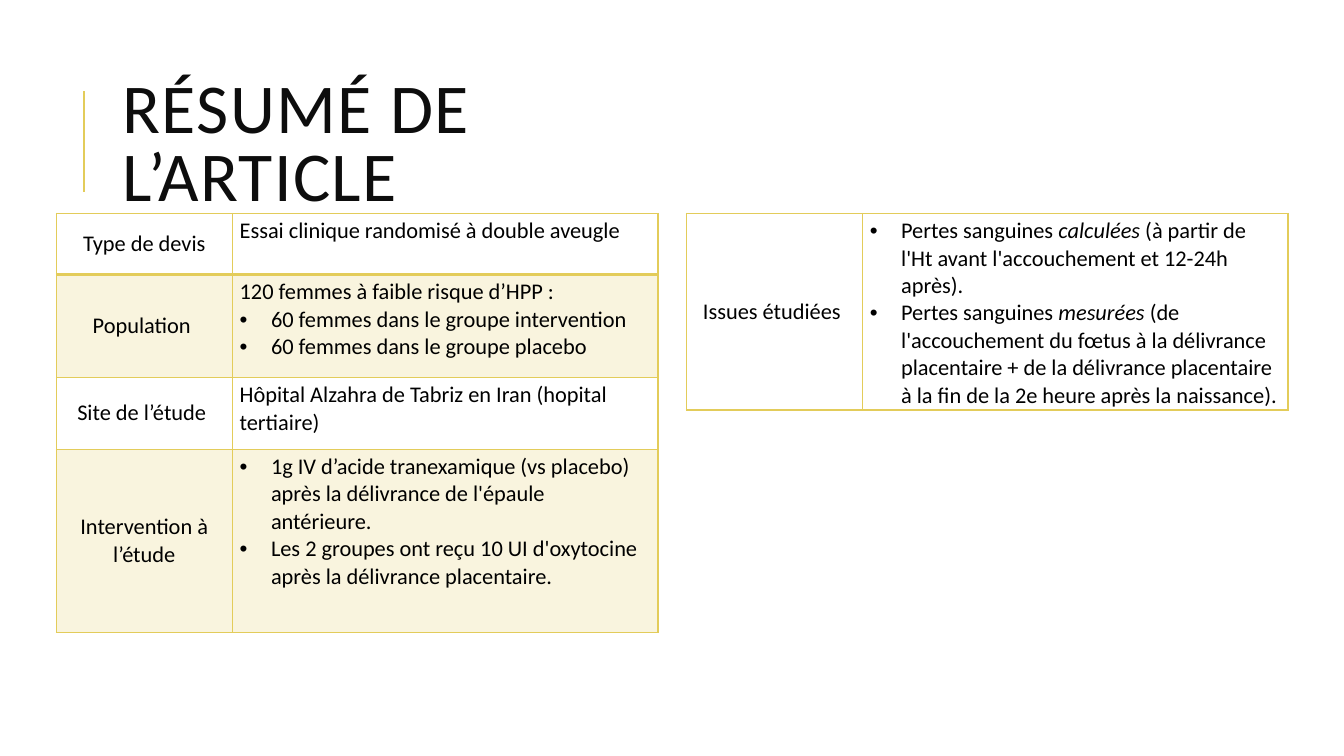
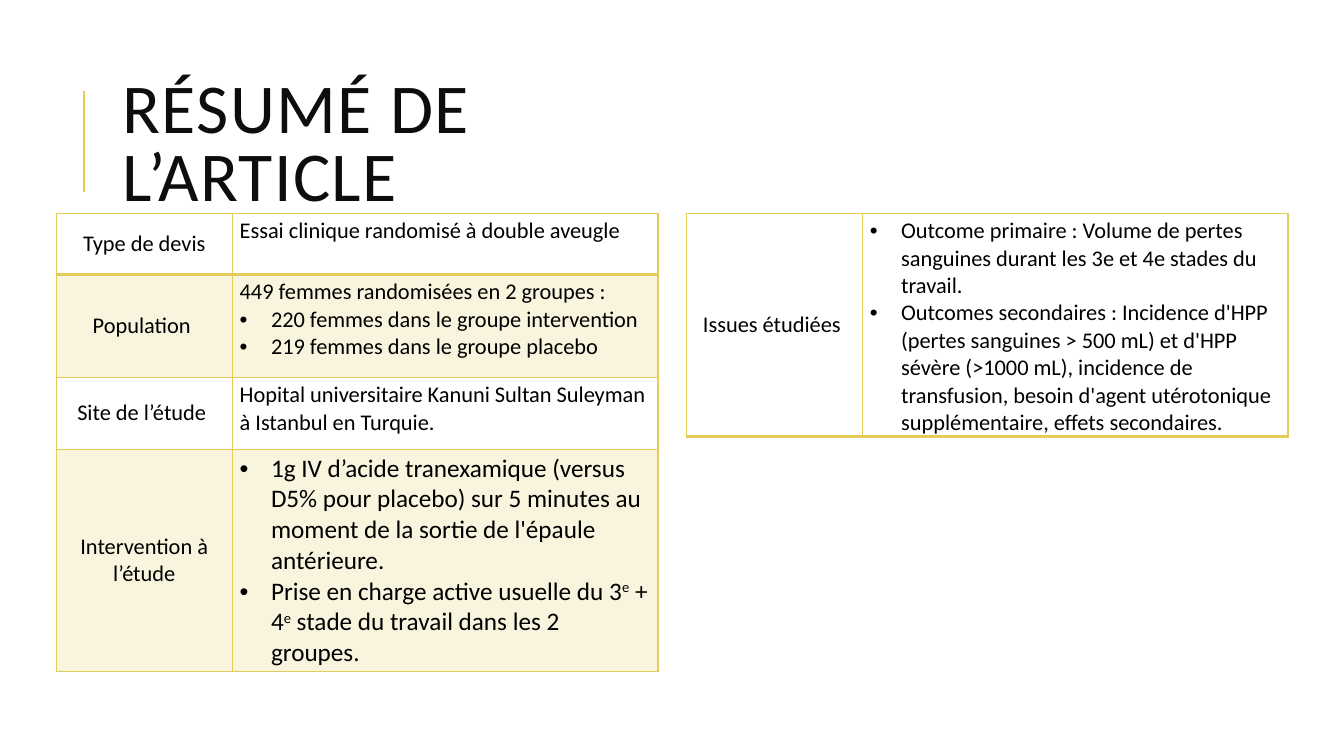
from lxml import etree
from pptx import Presentation
from pptx.dml.color import RGBColor
from pptx.enum import shapes, text
from pptx.oxml import ns
from pptx.util import Cm, Pt

GOLD = RGBColor(0xE3, 0xCC, 0x5A)
INK = RGBColor(0x0D, 0x0D, 0x0D)
BLACK = RGBColor(0, 0, 0)
FONT = "Calibri"
BODY_SIZE = 16
BAND_OPACITY = 20

TABLE_TOP = 5.38
LEFT_TABLE, RIGHT_TABLE = 1.42, 17.3
LABEL_WIDTH, DETAIL_WIDTH = 4.43, 10.73
BULLET_INDENT = 0.79


def bullet(*runs):
    return {"bullet": True, "runs": runs}


def plain(*runs):
    return {"bullet": False, "runs": runs}


def italic(words):
    return words, "italic"


def superscript(words):
    return words, "superscript"


TITLE = "RÉSUMÉ DE L’ARTICLE"
DESIGN = ("Type de devis", 1.54, BODY_SIZE,
          [plain("Essai clinique randomisé à double aveugle")])

# Each table row: label, height in cm, detail text size, detail paragraphs
STUDIES = [
    {
        "method": [
            DESIGN,
            ("Population ", 2.59, BODY_SIZE, [
                plain("120 femmes à faible risque d’HPP :"),
                bullet("60 femmes dans le groupe intervention"),
                bullet("60 femmes dans le groupe placebo"),
            ]),
            ("Site de l’étude ", 1.81, BODY_SIZE, [
                plain("Hôpital Alzahra de Tabriz en Iran (hopital tertiaire)"),
            ]),
            ("Intervention à l’étude", 4.62, BODY_SIZE, [
                bullet("1g IV d’acide tranexamique (vs placebo) après la "
                       "délivrance de l'épaule antérieure."),
                bullet("Les 2 groupes ont reçu 10 UI d'oxytocine après la "
                       "délivrance placentaire."),
            ]),
        ],
        "outcomes": [
            ("Issues étudiées ", 4.95, BODY_SIZE, [
                bullet("Pertes sanguines ", italic("calculées"),
                       " (à partir de l'Ht avant l'accouchement et 12-24h après)."),
                bullet("Pertes sanguines ", italic("mesurées"),
                       " (de l'accouchement du fœtus à la délivrance placentaire "
                       "+ de la délivrance placentaire à la fin de la 2e heure "
                       "après la naissance)."),
            ]),
        ],
    },
    {
        "method": [
            DESIGN,
            ("Population ", 2.59, BODY_SIZE, [
                plain("449 femmes randomisées en 2 groupes :"),
                bullet("220 femmes dans le groupe intervention"),
                bullet("219 femmes dans le groupe placebo"),
            ]),
            ("Site de l’étude ", 1.81, BODY_SIZE, [
                plain("Hopital universitaire Kanuni Sultan Suleyman à Istanbul "
                      "en Turquie."),
            ]),
            ("Intervention à l’étude", 5.6, 18, [
                bullet("1g IV d’acide tranexamique (versus D5% pour placebo) sur "
                       "5 minutes au moment de la sortie de l'épaule antérieure."),
                bullet("Prise en charge active usuelle du 3", superscript("e"),
                       " + 4", superscript("e"),
                       " stade du travail dans les 2 groupes."),
            ]),
        ],
        "outcomes": [
            ("Issues étudiées ", 5.61, BODY_SIZE, [
                bullet("Outcome primaire : Volume de pertes sanguines durant les "
                       "3e et 4e stades du travail."),
                bullet("Outcomes secondaires : Incidence d'HPP (pertes sanguines "
                       "> 500 mL) et d'HPP sévère (>1000 mL), incidence de "
                       "transfusion, besoin d'agent utérotonique supplémentaire, "
                       "effets secondaires."),
            ]),
        ],
    },
]


def style_run(run, size, color):
    run.font.name = FONT
    run.font.size = Pt(size)
    run.font.color.rgb = color


def add_bullet(paragraph):
    properties = paragraph._p.get_or_add_pPr()
    properties.set("marL", str(Cm(BULLET_INDENT)))
    properties.set("indent", str(-Cm(BULLET_INDENT)))
    etree.SubElement(properties, ns.qn("a:buFont"), typeface="Arial")
    etree.SubElement(properties, ns.qn("a:buChar"), char="•")


def add_borders(cell, widths):
    """Draw gold borders; widths are points for left, right, top and bottom."""
    properties = cell._tc.get_or_add_tcPr()
    for position, (side, width) in enumerate(zip("LRTB", widths)):
        border = etree.Element(ns.qn(f"a:ln{side}"), w=str(Pt(width)))
        fill = etree.SubElement(border, ns.qn("a:solidFill"))
        etree.SubElement(fill, ns.qn("a:srgbClr"), val=str(GOLD))
        properties.insert(position, border)


def fill_cell(cell, banded):
    if not banded:
        cell.fill.background()
        return
    cell.fill.solid()
    cell.fill.fore_color.rgb = GOLD
    color = cell._tc.tcPr.find(".//" + ns.qn("a:srgbClr"))
    etree.SubElement(color, ns.qn("a:alpha"), val=str(BAND_OPACITY * 1000))


def write_cell(cell, paragraphs, size, centered=False):
    cell.margin_left = cell.margin_right = Cm(0.19)
    cell.margin_top = cell.margin_bottom = Cm(0.1)
    cell.vertical_anchor = (text.MSO_ANCHOR.MIDDLE if centered
                            else text.MSO_ANCHOR.TOP)
    frame = cell.text_frame
    for index, content in enumerate(paragraphs):
        paragraph = frame.add_paragraph() if index else frame.paragraphs[0]
        paragraph.alignment = (text.PP_ALIGN.CENTER if centered
                               else text.PP_ALIGN.LEFT)
        if content["bullet"]:
            add_bullet(paragraph)
        for piece in content["runs"]:
            words, emphasis = (piece, None) if isinstance(piece, str) else piece
            run = paragraph.add_run()
            run.text = words
            style_run(run, size, BLACK)
            if emphasis == "italic":
                run.font.italic = True
            elif emphasis == "superscript":
                run.font._element.set("baseline", "30000")


def add_summary_table(slide, left, rows):
    """Add label/detail rows; the first row is underlined, odd ones tinted."""
    height = sum(row[1] for row in rows)
    table = slide.shapes.add_table(
        len(rows), 2, Cm(left), Cm(TABLE_TOP),
        Cm(LABEL_WIDTH + DETAIL_WIDTH), Cm(height)).table
    table.first_row = table.horz_banding = False
    for column, width in zip(table.columns, (LABEL_WIDTH, DETAIL_WIDTH)):
        column.width = Cm(width)
    for index, (label, row_height, size, details) in enumerate(rows):
        table.rows[index].height = Cm(row_height)
        label_cell, detail_cell = table.rows[index].cells
        write_cell(label_cell, [plain(label)], BODY_SIZE, centered=True)
        write_cell(detail_cell, details, size)
        top = 2 if index == 1 else 1
        bottom = 2 if index == 0 else 1
        for cell in (label_cell, detail_cell):
            fill_cell(cell, banded=index % 2 == 1)
            add_borders(cell, (1, 1, top, bottom))


def add_title(slide):
    rule = slide.shapes.add_connector(
        shapes.MSO_CONNECTOR.STRAIGHT, Cm(2.12), Cm(4.83), Cm(2.12), Cm(2.29))
    rule.line.color.rgb = GOLD
    rule.line.width = Pt(1.5)
    etree.SubElement(rule._element.spPr, ns.qn("a:effectLst"))

    frame = slide.shapes.add_textbox(
        Cm(2.84), Cm(1.63), Cm(12.32), Cm(4.17)).text_frame
    frame.word_wrap = True
    frame.vertical_anchor = text.MSO_ANCHOR.MIDDLE
    frame.text = TITLE
    paragraph = frame.paragraphs[0]
    paragraph.line_spacing = 0.8
    run = paragraph.runs[0]
    style_run(run, 50, INK)
    run.font._element.set("spc", "100")


def main():
    deck = Presentation()
    deck.slide_width, deck.slide_height = Cm(33.87), Cm(19.05)
    for study in STUDIES:
        slide = deck.slides.add_slide(deck.slide_layouts[6])
        add_title(slide)
        add_summary_table(slide, LEFT_TABLE, study["method"])
        add_summary_table(slide, RIGHT_TABLE, study["outcomes"])
    deck.save("out.pptx")


if __name__ == "__main__":
    main()
